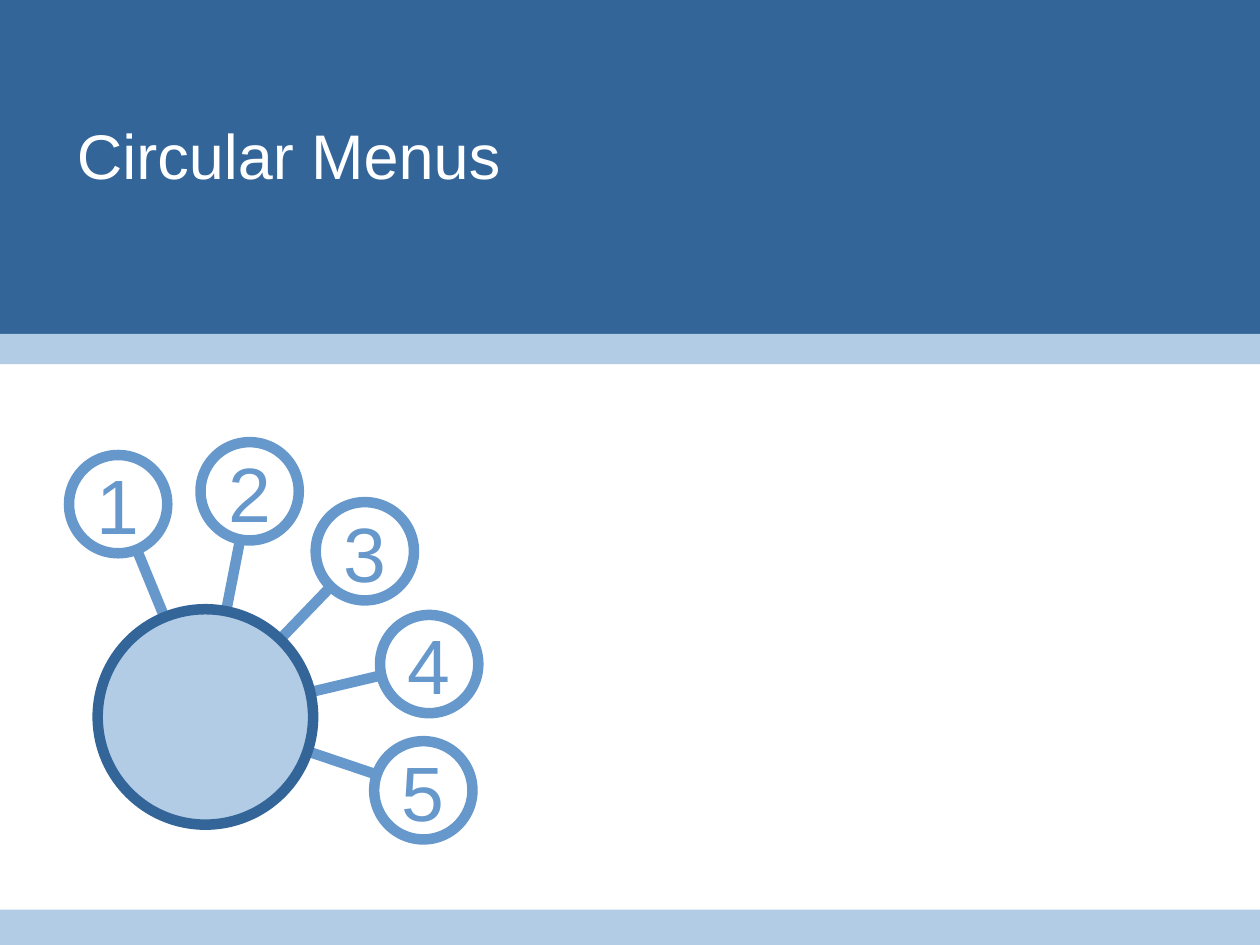
import math
from lxml import etree
from pptx import Presentation
from pptx import util as u
from pptx.dml import color
from pptx.enum import shapes, text
from pptx.oxml import ns

COLORS = {"navy": "336599", "blue": "6698CC", "pale": "B3CCE6", "white": "FFFFFF"}
COLUMNS, ROWS = 100, 75


class SlideBuilder:
    font = "Arial"
    line_width = 6

    def __init__(self, deck):
        self.cell_width = deck.slide_width / COLUMNS
        self.cell_height = deck.slide_height / ROWS
        self.slide = deck.slides.add_slide(deck.slide_layouts[0])

    def x(self, columns):
        return u.Emu(round(columns * self.cell_width))

    def y(self, rows):
        return u.Emu(round(rows * self.cell_height))

    def color(self, name):
        return color.RGBColor.from_string(COLORS[name])

    def format_text(self, frame, words, size, ink, align):
        frame.text = words
        frame.word_wrap = True
        frame.vertical_anchor = text.MSO_ANCHOR.MIDDLE
        para = frame.paragraphs[0]
        para.alignment = align
        font = para.runs[0].font
        font.name, font.size, font.bold = self.font, u.Pt(size), False
        font.color.rgb = self.color(ink)

    def shape(self, kind, left, top, width, height, fill):
        shape = self.slide.shapes.add_shape(
            kind, self.x(left), self.y(top), self.x(width), self.y(height))
        shape.shadow.inherit = False
        shape.fill.solid()
        shape.fill.fore_color.rgb = self.color(fill)
        shape.line.fill.background()
        return shape

    def band(self, top, height, fill):
        self.shape(shapes.MSO_SHAPE.RECTANGLE, 0, top, COLUMNS, height, fill)

    def circle(self, center, radius, fill, outline, label=None):
        left, top = center[0] - radius, center[1] - radius
        circle = self.shape(
            shapes.MSO_SHAPE.OVAL, left, top, 2 * radius, 2 * radius, fill)
        circle.line.color.rgb = self.color(outline)
        circle.line.width = u.Pt(self.line_width)
        if label:
            frame = circle.text_frame
            frame.margin_left = frame.margin_right = 0
            frame.margin_top = frame.margin_bottom = 0
            self.format_text(frame, label, 44, outline, text.PP_ALIGN.CENTER)

    def spoke(self, start, end, ink):
        spoke = self.slide.shapes.add_connector(
            shapes.MSO_CONNECTOR.STRAIGHT,
            self.x(start[0]), self.y(start[1]), self.x(end[0]), self.y(end[1]))
        spoke.line.color.rgb = self.color(ink)
        spoke.line.width = u.Pt(self.line_width)
        etree.SubElement(spoke._element.spPr, ns.qn("a:effectLst"))

    def title(self, words, left, top, width, height):
        title = self.slide.shapes.title
        title.left, title.top = self.x(left), self.y(top)
        title.width, title.height = self.x(width), self.y(height)
        self.format_text(title.text_frame, words, 36, "white", text.PP_ALIGN.LEFT)
        title._element.getparent().append(title._element)

    def remove_subtitle(self):
        subtitle = self.slide.placeholders[1]._element
        subtitle.getparent().remove(subtitle)


def point_around(center, distance, angle):
    turn = math.radians(angle)
    return (center[0] + distance * math.cos(turn),
            center[1] - distance * math.sin(turn))


def main():
    deck = Presentation()
    deck.slide_width, deck.slide_height = u.Inches(10), u.Inches(7.5)
    page = SlideBuilder(deck)
    page.remove_subtitle()

    page.band(0, 26.5, "navy")
    page.band(72.2, 2.8, "pale")
    page.band(26.5, 2.4, "pale")
    page.title("Circular Menus", 5.1, 3.2, 87.4, 18.1)

    hub, hub_radius = (16.3, 56.9), 8.55
    item_radius, orbit = 3.9, 18.25
    item_angles = [112.3, 78.9, 46.1, 13.3, -18.6]
    for number, angle in enumerate(item_angles, 1):
        page.circle(point_around(hub, orbit, angle), item_radius,
                    "white", "blue", str(number))
        page.spoke(point_around(hub, hub_radius, angle),
                   point_around(hub, orbit - item_radius, angle), "blue")
    page.circle(hub, hub_radius, "pale", "navy")

    deck.save("out.pptx")


if __name__ == "__main__":
    main()
